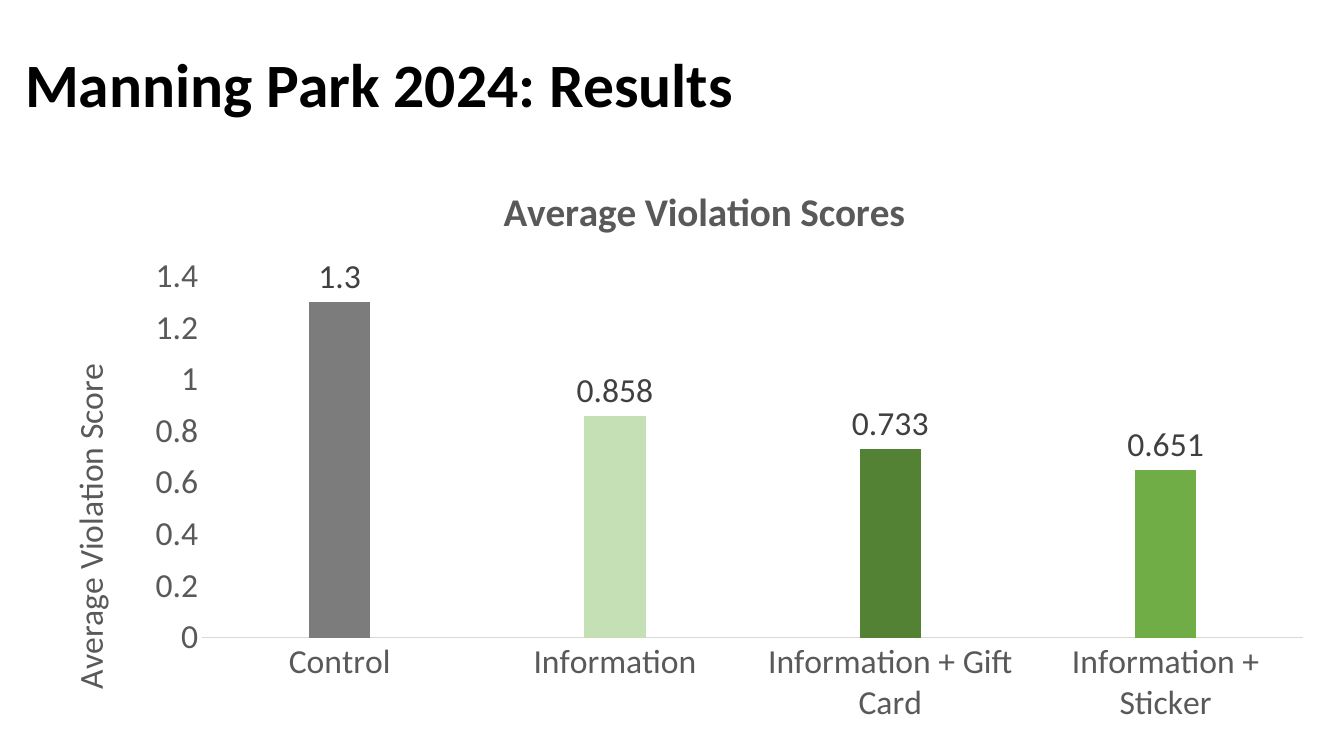
from lxml import etree
from pptx import Presentation
from pptx.chart.data import CategoryChartData
from pptx.dml.color import RGBColor
from pptx.enum.chart import XL_CHART_TYPE, XL_LABEL_POSITION, XL_TICK_MARK
from pptx.enum.text import MSO_ANCHOR
from pptx.oxml.ns import qn
from pptx.util import Pt

PX = 9144
BLACK = RGBColor(0x00, 0x00, 0x00)
GREY_TEXT = RGBColor(0x59, 0x59, 0x59)
LABEL_TEXT = RGBColor(0x40, 0x40, 0x40)
AXIS_LINE = RGBColor(0xD9, 0xD9, 0xD9)
GREY = RGBColor(0x7C, 0x7C, 0x7C)
PALE_GREEN = RGBColor(0xC5, 0xE0, 0xB4)
DARK_GREEN = RGBColor(0x54, 0x82, 0x35)
GREEN = RGBColor(0x70, 0xAD, 0x47)
BLUE = RGBColor(0x3E, 0x70, 0xCA)
MID_GREY = RGBColor(0xA5, 0xA5, 0xA5)

SCORES = {
    "Control": (1.3, GREY),
    "Information": (0.858, PALE_GREEN),
    "Information + Gift Card": (0.733, DARK_GREEN),
    "Information + Sticker": (0.651, GREEN),
}


class SlideBuilder:
    """Holds the text style and the current slide, and adds elements to it."""

    def __init__(self, prs, font="Calibri"):
        self.font = font
        self.s = prs.slides.add_slide(prs.slide_layouts[6])

    def style(self, font, size, color, bold=False):
        for name, value in {"name": self.font, "size": Pt(size), "bold": bold}.items():
            setattr(font, name, value)
        font.color.rgb = color

    def text(self, box, text, size, color, bold=False):
        sp = self.s.shapes.add_textbox(*(n * PX for n in box))
        tf = sp.text_frame
        tf.word_wrap = True
        tf.vertical_anchor = MSO_ANCHOR.MIDDLE
        p = tf.paragraphs[0]
        p.line_spacing = 0.9
        r = p.add_run()
        r.text = text
        self.style(r.font, size, color, bold)

    def place(self, parent, index, **fractions):
        for old in parent.findall(qn("c:layout")):
            parent.remove(old)
        layout = etree.Element(qn("c:layout"))
        manual = etree.SubElement(layout, qn("c:manualLayout"))
        if "w" in fractions:
            etree.SubElement(manual, qn("c:layoutTarget")).set("val", "inner")
        for axis in "xy":
            etree.SubElement(manual, qn(f"c:{axis}Mode")).set("val", "edge")
        for name, value in fractions.items():
            etree.SubElement(manual, qn(f"c:{name}")).set("val", str(value))
        parent.insert(index, layout)

    def chart_title(self, title, text, size, bold, x, y):
        tf = title.text_frame
        tf.text = text
        self.style(tf.paragraphs[0].runs[0].font, size, GREY_TEXT, bold)
        self.place(title._element, 1, x=x, y=y)

    def axis(self, axis):
        axis.has_major_gridlines = False
        axis.major_tick_mark = axis.minor_tick_mark = XL_TICK_MARK.NONE
        self.style(axis.tick_labels.font, 24, GREY_TEXT)

    def column_chart(self, box, scores, title, value_title):
        data = CategoryChartData()
        data.categories = list(scores)
        empty = [None] * len(scores)
        values = [value for value, _ in scores.values()]
        for i, series_values in enumerate((empty, values, empty), 1):
            data.add_series(f"Series {i}", series_values)
        chart = self.s.shapes.add_chart(
            XL_CHART_TYPE.COLUMN_CLUSTERED, *(n * PX for n in box), data).chart
        self.style(chart.font, 24, BLACK)
        chart.has_legend = False
        chart.has_title = True
        self.chart_title(chart.chart_title, title, 28, True, 0.35, 0.04)
        chart.chart_title.include_in_layout = False

        self.axis(chart.category_axis)
        chart.category_axis.format.line.color.rgb = AXIS_LINE
        chart.category_axis.format.line.width = Pt(1)
        axis = chart.value_axis
        self.axis(axis)
        axis.format.line.fill.background()
        for name, value in {"minimum_scale": 0, "maximum_scale": 1.4, "major_unit": 0.2}.items():
            setattr(axis, name, value)
        self.chart_title(axis.axis_title, value_title, 24, False, 0.01, 0.35)

        plot = chart.plots[0]
        for name, value in {"gap_width": 100, "overlap": -24, "vary_by_categories": False}.items():
            setattr(plot, name, value)
        for series, color in zip(plot.series, (BLUE, PALE_GREEN, MID_GREY)):
            series.format.fill.solid()
            series.format.fill.fore_color.rgb = color
        bars = plot.series[1]
        for i, (_, color) in enumerate(scores.values()):
            fill = bars.points[i].format.fill
            fill.solid()
            fill.fore_color.rgb = color
        labels = bars.data_labels
        labels.show_value = True
        labels.position = XL_LABEL_POSITION.OUTSIDE_END
        self.style(labels.font, 24, LABEL_TEXT)
        plot_area = chart._chartSpace.chart.plotArea
        self.place(plot_area, 0, x=0.12, y=0.21, w=0.86, h=0.62)


def main():
    prs = Presentation()
    prs.slide_width, prs.slide_height = 1333 * PX, 750 * PX
    slide = SlideBuilder(prs)
    slide.text((15, 14, 1150, 145), "Manning Park 2024: Results", 44, BLACK, True)
    slide.column_chart((48, 153, 1270, 578), SCORES,
                       "Average Violation Scores", "Average Violation Score")
    prs.save("out.pptx")


if __name__ == "__main__":
    main()
